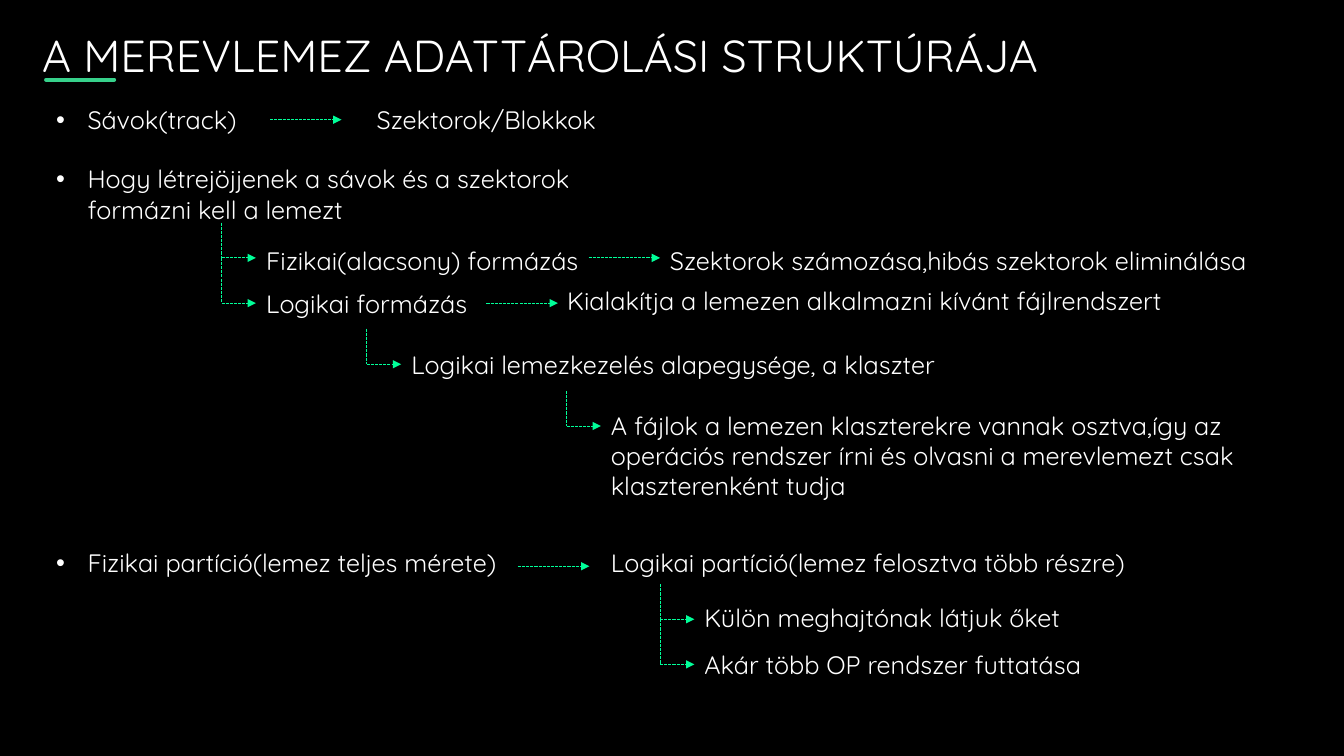
from lxml.etree import SubElement
from pptx import Presentation
from pptx.dml.color import RGBColor as RGB
from pptx.enum.dml import MSO_LINE as DASH
from pptx.enum.shapes import MSO_CONNECTOR as CONN
from pptx.enum.text import MSO_ANCHOR as ANCHOR, MSO_AUTO_SIZE as FIT
from pptx.oxml.ns import qn
from pptx.util import Pt

COLORS = {"bg": "000000", "text": "FFFFFF", "fade": "A6A6A6",
          "accent": "37D18B", "arrow": "00FF99"}
BODY = {"name": "Quicksand", "size": Pt(18)}
TITLE = {"name": "Quicksand", "size": Pt(32)}
FRAME = {"word_wrap": True, "auto_size": FIT.NONE}


class Deck:
    def __init__(self, prs):
        self.slide = prs.slides.add_slide(prs.slide_layouts[6])
        fill = self.slide.background.fill
        fill.solid()
        fill.fore_color.rgb = self.color("bg")

    def color(self, key):
        return RGB.from_string(COLORS[key])

    def apply(self, target, values):
        for key, value in values.items():
            setattr(target, key, value)

    def text(self, x, y, w, h, text, style=BODY, anchor=ANCHOR.TOP):
        sp = self.slide.shapes.add_textbox(Pt(x), Pt(y), Pt(w), Pt(h))
        tf = sp.text_frame
        self.apply(tf, {**FRAME, "vertical_anchor": anchor})
        p = tf.paragraphs[0]
        p.text = text
        for r in p.runs:
            self.apply(r.font, style)
            r.font.fill.solid()
            r.font.fill.fore_color.rgb = self.color("text")
        return p

    def title(self, x, y, w, h, text):
        p = self.text(x, y, w, h, text, TITLE, ANCHOR.MIDDLE)
        fill = p.runs[0].font.fill
        fill.gradient()
        fill.gradient_angle = 267
        for stop, key, pos in zip(fill.gradient_stops, ("text", "fade"), (0, 1)):
            stop.color.rgb = self.color(key)
            stop.position = pos

    def bullet(self, x, y, w, h, text):
        pPr = self.text(x, y, w, h, text)._p.get_or_add_pPr()
        pPr.set("marL", str(Pt(22.5)))
        pPr.set("indent", str(-Pt(22.5)))
        SubElement(pPr, qn("a:buFont"), typeface="Arial")
        SubElement(pPr, qn("a:buChar"), char="•")

    def line(self, x1, y1, x2, y2, key="arrow", width=0.75, dash=DASH.SQUARE_DOT):
        c = self.slide.shapes.add_connector(CONN.STRAIGHT, Pt(x1), Pt(y1), Pt(x2), Pt(y2))
        self.apply(c.line, {"width": Pt(width), "dash_style": dash})
        c.line.color.rgb = self.color(key)
        spPr = c._element.spPr
        SubElement(spPr, qn("a:effectLst"))
        return spPr.find(qn("a:ln"))

    def underline(self, x, y, w):
        ln = self.line(x, y, x + w, y, "accent", 3, None)
        ln.set("cap", "rnd")

    def arrow(self, x, y, w=51):
        SubElement(self.line(x, y, x + w, y), qn("a:tailEnd"), type="triangle")

    def branch(self, x, top, *levels):
        for y in levels:
            self.line(x, top, x, y)
            self.arrow(x, y, 24.5)
            top = y


def main():
    prs = Presentation()
    prs.slide_width, prs.slide_height = Pt(960), Pt(540)
    d = Deck(prs)

    d.title(23, -36, 780, 150, "A MEREVLEMEZ ADATTÁROLÁSI STRUKTÚRÁJA")
    d.underline(33, 57, 48.5)

    for x, y, w, h, text in (
        (33, 71.3, 150, 29, "Sávok(track)"),
        (33, 113.3, 413, 51, "Hogy létrejöjjenek a sávok és a szektorok formázni kell a lemezt"),
        (33, 387.5, 365, 29, "Fizikai partíció(lemez teljes mérete)"),
    ):
        d.bullet(x, y, w, h, text)

    for x, y, w, h, text in (
        (262, 71.3, 171, 29, "Szektorok/Blokkok"),
        (183, 171.5, 250, 29, "Fizikai(alacsony) formázás"),
        (471.5, 171.5, 446, 29, "Szektorok számozása,hibás szektorok eliminálása"),
        (183, 202.5, 250, 29, "Logikai formázás"),
        (398, 200.3, 490, 29, "Kialakítja a lemezen alkalmazni kívánt fájlrendszert"),
        (286.7, 246.2, 490, 29, "Logikai lemezkezelés alapegysége, a klaszter"),
        (429.3, 289.5, 490, 73, "A fájlok a lemezen klaszterekre vannak osztva,így az\n"
         "operációs rendszer írni és olvasni a merevlemezt csak klaszterenként tudja"),
        (429.3, 387.5, 520, 29, "Logikai partíció(lemez felosztva több részre)"),
        (496, 427, 446, 29, "Külön meghajtónak látjuk őket"),
        (496, 460.2, 446, 29, "Akár több OP rendszer futtatása"),
    ):
        d.text(x, y, w, h, text)

    for x, y in ((193, 85.5), (420.5, 184.2), (347.5, 216.5), (370, 404.5)):
        d.arrow(x, y)

    for x, top, *levels in (
        (158.3, 159, 184.2, 216.5),
        (262, 234.8, 260.2),
        (404.7, 279.2, 304.3),
        (471.5, 417.3, 442.3, 474.6),
    ):
        d.branch(x, top, *levels)

    prs.save("out.pptx")


if __name__ == "__main__":
    main()
